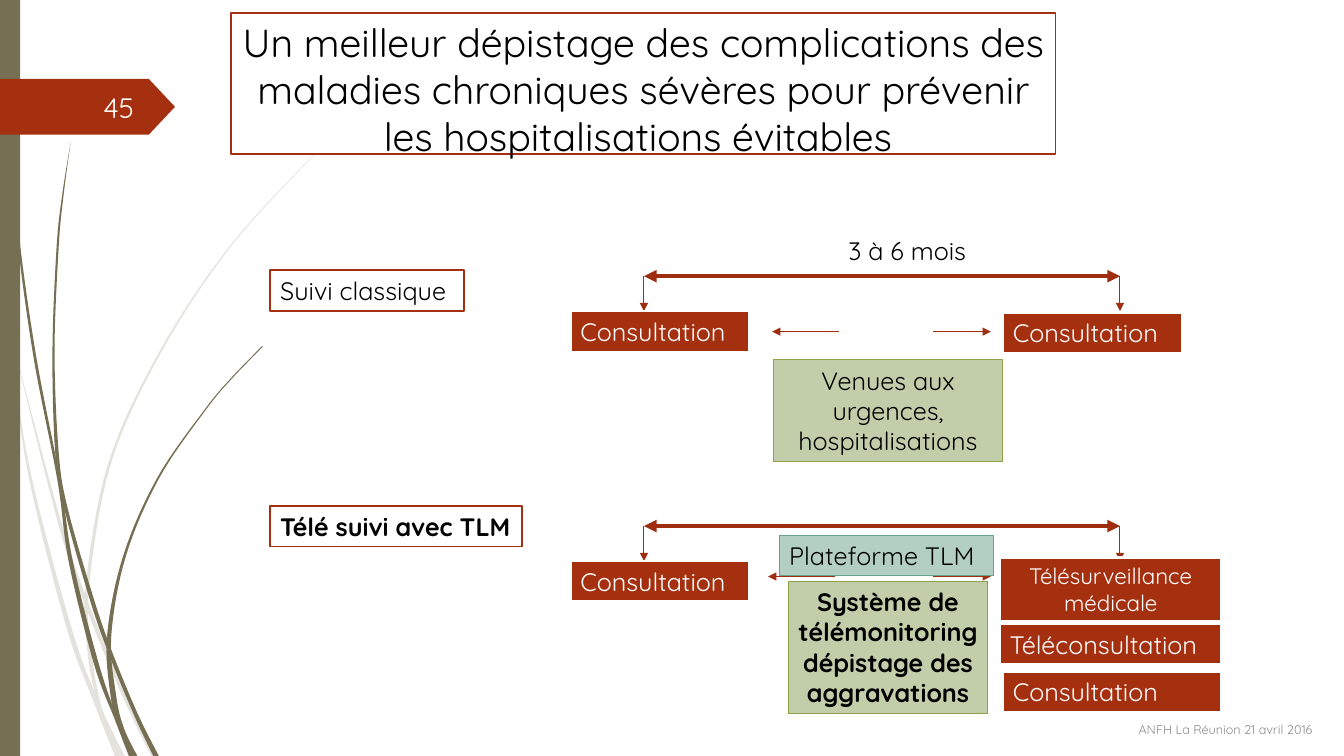
from collections import namedtuple
from dataclasses import dataclass

from pptx import Presentation
from pptx import util as u
from pptx.dml import color
from pptx.enum import shapes, text
from pptx.oxml import ns, xmlchemy

Box = namedtuple("Box", "left top width height")
Pt = u.Pt
ALIGN = text.PP_ALIGN


@dataclass(frozen=True)
class Theme:
    font: str = "Quicksand"
    red: str = "A53010"
    arrow: str = "9E2E0F"
    olive: str = "766F54"
    pale: str = "E4E2DD"
    white: str = "FFFFFF"
    black: str = "000000"
    grey: str = "8C8C8C"
    sage: str = "C2CEA9"
    sage_line: str = "8BA249"
    mint: str = "B3CFC2"
    mint_line: str = "65A48B"
    title: int = 28
    number: int = 20
    body: int = 18
    small: int = 16
    footer: int = 9


THEME = Theme()
# Box looks: fill, line, line width, text colour
SOLID = (THEME.red, THEME.white, 1.75, THEME.white)
OUTLINE = (THEME.white, THEME.red, 1.25, THEME.black)
SAGE = (THEME.sage, THEME.sage_line, 0.75, THEME.black)
MINT = (THEME.mint, THEME.mint_line, 0.75, THEME.black)
PLAIN = (None, None, 0, THEME.black)

# Stems of the side decoration: left edge x, y, width
PALE_STEMS = [
    [(8, 252, 0), (20, 338, 2), (47, 446.5, 3.5), (66, 499, 3.5), (82, 540, 7)],
    [(10, 248, 0), (42, 375.5, 2.5), (63, 438, 3), (88.5, 499.5, 3), (108, 540, 4)],
    [(224, 110.5, 0.5), (164, 176, 1), (114, 251, 1.5), (77, 332, 2), (61, 420.5, 2.5),
     (62.5, 465, 3), (67, 492, 2.5), (73, 514, 2.5), (85, 540, 4)],
]
OLIVE_STEMS = [
    [(2, 0, 0), (5, 79, 1), (12, 167.5, 1.5), (24, 255.5, 2), (41, 343, 2),
     (49, 401, 3), (67, 474, 3.5), (82, 514, 2.5), (92, 540, 6)],
    [(50.5, 101.5, 0), (44.5, 139, 1), (40.5, 176, 1.5), (37.5, 251, 1.5),
     (39.5, 323.5, 2.5), (46, 363.5, 2.5), (63.5, 426, 3), (76.5, 464, 3),
     (95, 509, 3), (109.5, 540, 4)],
    [(187, 247.5, 1), (166.5, 268.5, 1), (147, 291.5, 1), (112.5, 341, 1.5),
     (88, 397, 2), (76.5, 454, 3), (79, 497, 4), (85, 520, 3.5), (94, 540, 4)],
]


def rgb(value):
    return color.RGBColor.from_string(value)


def paint(shape, fill, line=None, width=0):
    shape.shadow.inherit = False
    if fill:
        shape.fill.solid()
        shape.fill.fore_color.rgb = rgb(fill)
    else:
        shape.fill.background()
    if line:
        shape.line.color.rgb = rgb(line)
        shape.line.width = Pt(width)
    else:
        shape.line.fill.background()


def add_block(slide, box, words, look, size=THEME.body, align=ALIGN.LEFT,
              bold=False, wrap=True, anchor=text.MSO_ANCHOR.TOP):
    fill, line, width, ink = look
    lengths = [Pt(length) for length in box]
    if fill:
        shape = slide.shapes.add_shape(shapes.MSO_SHAPE.RECTANGLE, *lengths)
    else:
        shape = slide.shapes.add_textbox(*lengths)
    paint(shape, fill, line, width)
    frame = shape.text_frame
    frame.word_wrap = wrap
    frame.vertical_anchor = anchor
    paragraph = frame.paragraphs[0]
    paragraph.alignment = align
    run = paragraph.add_run()
    run.text = words
    run.font.name = THEME.font
    run.font.size = Pt(size)
    run.font.bold = bold
    run.font.color.rgb = rgb(ink)


def add_arrow(slide, start, end, width=0.75, both=False):
    points = [Pt(value) for value in (*start, *end)]
    line = slide.shapes.add_connector(shapes.MSO_CONNECTOR.STRAIGHT, *points)
    line.line.color.rgb = rgb(THEME.arrow)
    line.line.width = Pt(width)
    outline = line.line._get_or_add_ln()
    for tag in ("a:headEnd", "a:tailEnd") if both else ("a:tailEnd",):
        xmlchemy.OxmlElement(tag)
        end_mark = outline.makeelement(ns.qn(tag), {"type": "triangle"})
        outline.append(end_mark)
    line._element.spPr.append(xmlchemy.OxmlElement("a:effectLst"))


def smooth(points, steps=8):
    """Catmull-Rom curve through the points."""
    padded = [points[0], *points, points[-1]]
    curve = []
    for a, b, c, d in zip(padded, padded[1:], padded[2:], padded[3:]):
        for step in range(steps):
            t = step / steps
            curve.append(tuple(
                (2 * q + (r - p) * t + (2 * p - 5 * q + 4 * r - s) * t ** 2
                 + (3 * q - p - 3 * r + s) * t ** 3) / 2
                for p, q, r, s in zip(a, b, c, d)))
    return curve + [points[-1]]


def add_stem(slide, stem, fill):
    curve = smooth(stem)
    outline = [(x, y) for x, y, _ in curve] + [(x + w, y) for x, y, w in reversed(curve)]
    points = [(Pt(x), Pt(y)) for x, y in outline]
    builder = slide.shapes.build_freeform(*points[0])
    builder.add_line_segments(points[1:], close=True)
    paint(builder.convert_to_shape(), fill)


def add_side(slide, box):
    # Stems, side bar and page number tab
    for stems, fill in ((PALE_STEMS, THEME.pale), (OLIVE_STEMS, THEME.olive)):
        for stem in stems:
            add_stem(slide, stem, fill)
    bar = slide.shapes.add_shape(shapes.MSO_SHAPE.RECTANGLE, *map(Pt, box))
    paint(bar, THEME.olive)
    tab = slide.shapes.add_shape(shapes.MSO_SHAPE.PENTAGON, Pt(box.left), Pt(box.top + 56.4),
                                 Pt(125), Pt(39.8))
    tab.adjustments[0] = 0.47
    paint(tab, THEME.red)
    add_block(slide, Box(box.left + 41.8, box.top + 62, 61.2, 28.8), "45",
              (None, None, 0, THEME.white), THEME.number, ALIGN.RIGHT,
              anchor=text.MSO_ANCHOR.MIDDLE)


def add_follow_up(slide, box, label, label_box, bold, inner_arrows, blocks):
    """One follow-up timeline; every position is relative to the box."""
    def at(x, y):
        return box.left + x, box.top + y

    # Period between two consultations
    begin, end = 267, 607
    add_arrow(slide, at(begin, 0), at(end, 0), 3, both=True)
    for x in (begin, end):
        add_arrow(slide, at(x, 0), at(x, 25), 0.75)
    # Events in between
    for start, stop, y in inner_arrows:
        add_arrow(slide, at(start, y), at(stop, y))
    # Label and stages
    x, y, width, height = label_box
    add_block(slide, Box(*at(x, y), width, height), label, OUTLINE, bold=bold, wrap=False)
    first = ((214.5, 25, 128, 29), "Consultation", SOLID, {})
    for (x, y, width, height), words, look, options in (first, *blocks):
        add_block(slide, Box(*at(x, y), width, height), words, look, **options)


def add_classic(slide, box):
    add_follow_up(
        slide, box, "Suivi classique", (0, -4.3, 138.2, 29), False,
        [(406, 358.5, 39.6), (473.7, 514.8, 39.6)],
        [((523.4, 26, 128, 29), "Consultation", SOLID, {}),
         ((406, -33, 117.4, 29), "3 à 6 mois", PLAIN, {}),
         ((359.2, 59.8, 164.2, 72.7), "Venues aux urgences, hospitalisations", SAGE,
          {"align": ALIGN.CENTER})])


def add_remote(slide, box):
    add_follow_up(
        slide, box, "Télé suivi avec TLM", (0, -14.4, 180, 29), True,
        [(403.2, 355.6, 36), (473.7, 514.8, 36)],
        [((521.2, 22.3, 158.4, 46), "Télésurveillance médicale", SOLID,
          {"size": THEME.small, "align": ALIGN.CENTER}),
         ((370, 39.6, 142.6, 94.3), "Système de télémonitoring dépistage des aggravations",
          SAGE, {"align": ALIGN.CENTER, "bold": True}),
         ((521.2, 69.8, 158.4, 29), "Téléconsultation", SOLID, {}),
         ((363.6, 6.5, 153.4, 29), "Plateforme TLM", MINT, {}),
         ((523.4, 103.7, 156.2, 29), "Consultation", SOLID, {})])


def main():
    presentation = Presentation()
    presentation.slide_width, presentation.slide_height = Pt(960), Pt(540)
    slide = presentation.slides.add_slide(presentation.slide_layouts[6])
    add_side(slide, Box(0, 0, 14.4, 540))
    # Title
    add_block(slide, Box(165, 9.4, 589, 100.8),
              "Un meilleur dépistage des complications des maladies chroniques sévères "
              "pour prévenir les hospitalisations évitables ",
              OUTLINE, THEME.title, ALIGN.CENTER)
    add_classic(slide, Box(193, 197.3, 680, 133))
    add_remote(slide, Box(193, 375.8, 680, 134))
    # Footer
    add_block(slide, Box(204.5, 507, 740, 28.8), "ANFH La Réunion 21 avril 2016",
              (None, None, 0, THEME.grey), THEME.footer, ALIGN.RIGHT,
              anchor=text.MSO_ANCHOR.MIDDLE)
    presentation.save("out.pptx")


if __name__ == "__main__":
    main()
